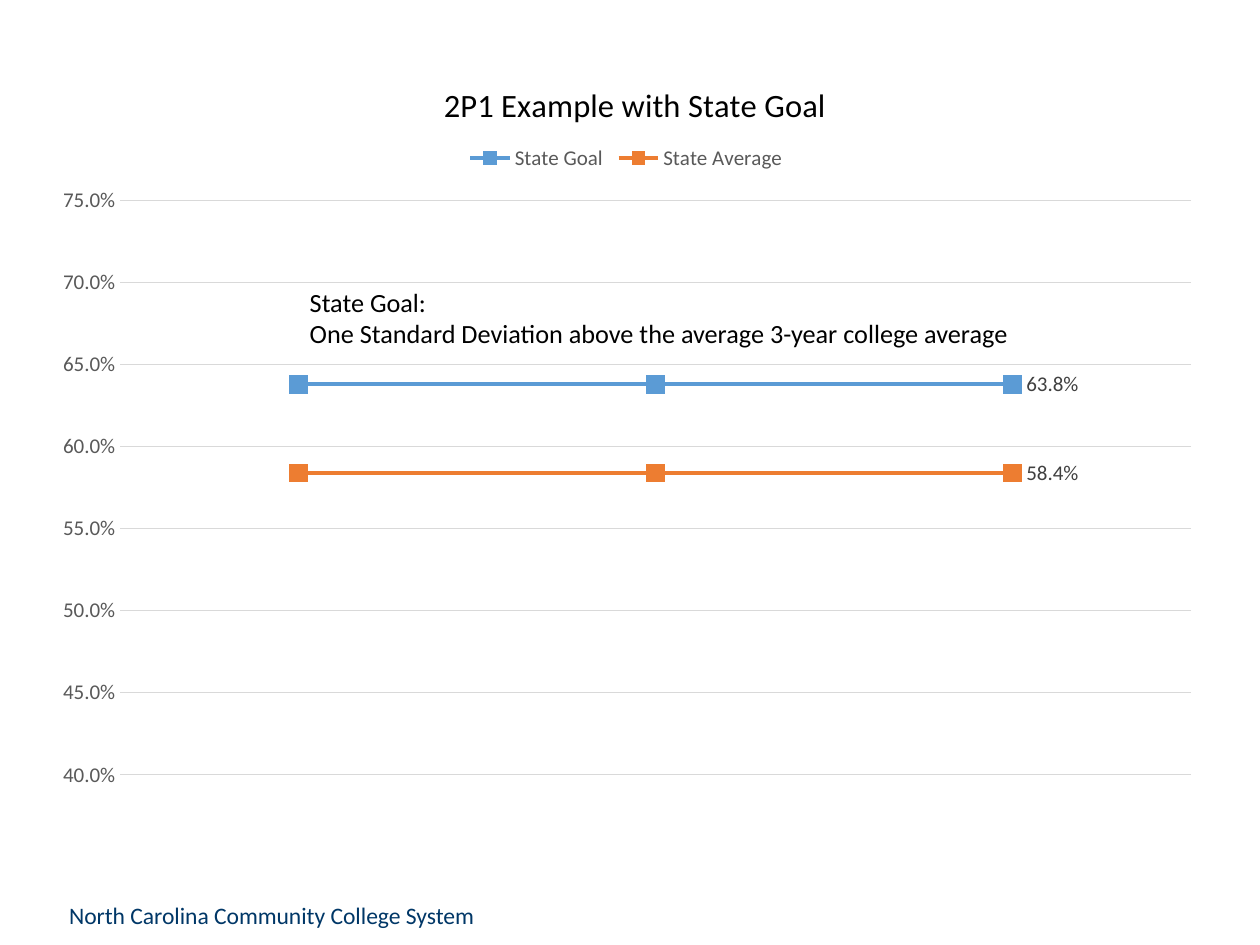
from pptx import Presentation
from pptx.chart.data import CategoryChartData
from pptx.dml.color import RGBColor
from pptx.enum.chart import XL_CHART_TYPE, XL_LABEL_POSITION, XL_LEGEND_POSITION, XL_MARKER_STYLE, XL_TICK_MARK
from pptx.oxml import parse_xml
from pptx.oxml.ns import nsdecls
from pptx.util import Inches, Pt

LINE_MARKERS = XL_CHART_TYPE.LINE_MARKERS
LABEL_RIGHT = XL_LABEL_POSITION.RIGHT
LEGEND_TOP = XL_LEGEND_POSITION.TOP
SQUARE = XL_MARKER_STYLE.SQUARE
NO_TICK = XL_TICK_MARK.NONE

COLORS = {
    "black": "000000",
    "navy": "003767",
    "axis": "595959",
    "label": "404040",
    "grid": "D9D9D9",
    "State Goal": "5B9BD5",
    "State Average": "ED7D31",
}
GOALS = {"State Goal": 0.638, "State Average": 0.584}
YEARS = 3


def style_font(font, size, color):
    font.name = "Calibri"
    font.size = Pt(size)
    font.bold = False
    font.color.rgb = RGBColor.from_string(COLORS[color])


def place_in_chart(element, index, target="", **shares):
    for layout in element.xpath("c:layout"):
        element.remove(layout)
    modes = "".join(f'<c:{axis}Mode val="edge"/>' for axis in "xy")
    values = "".join(f'<c:{name} val="{share}"/>' for name, share in shares.items())
    element.insert(index, parse_xml(
        f'<c:layout {nsdecls("c")}><c:manualLayout>{target}{modes}{values}'
        "</c:manualLayout></c:layout>"))


presentation = Presentation()
presentation.slide_width = Inches(10)
presentation.slide_height = Inches(7.5)
slide = presentation.slides.add_slide(presentation.slide_layouts[6])

chart_data = CategoryChartData(number_format="0.0%")
chart_data.categories = [" "] * YEARS
for name, value in GOALS.items():
    chart_data.add_series(name, [value] * YEARS)
chart = slide.shapes.add_chart(
    LINE_MARKERS, Inches(0.3), Inches(0.36), Inches(9.34), Inches(6.16), chart_data).chart
style_font(chart.font, 10, "black")

chart.has_title = True
title_paragraph = chart.chart_title.text_frame.paragraphs[0]
title_paragraph.text = "2P1 Example with State Goal"
style_font(title_paragraph.font, 18.6, "black")
chart.chart_title.include_in_layout = False
place_in_chart(chart.chart_title._element, 1, x=0.34, y=0.04)

chart.has_legend = True
chart.legend.position = LEGEND_TOP
chart.legend.include_in_layout = False
style_font(chart.legend.font, 12, "axis")
place_in_chart(chart.legend._element, 1, x=0.36, y=0.12, w=0.28, h=0.05)

plot_area = chart._chartSpace.xpath(".//c:plotArea")[0]
place_in_chart(plot_area, 0, '<c:layoutTarget val="inner"/>', x=0.07, y=0.2, w=0.91, h=0.74)
chart.plots[0].vary_by_categories = False

grid_color = RGBColor.from_string(COLORS["grid"])
value_axis = chart.value_axis
value_axis.minimum_scale = 0.4
value_axis.maximum_scale = 0.75
value_axis.major_unit = 0.05
value_axis.tick_labels.number_format = "0.0%"
value_axis.tick_labels.number_format_is_linked = False
value_axis.format.line.fill.background()
chart.category_axis.format.line.color.rgb = grid_color
chart.category_axis.format.line.width = Pt(0.75)
value_axis.major_gridlines.format.line.color.rgb = grid_color
value_axis.major_gridlines.format.line.width = Pt(0.75)
for axis in (chart.category_axis, value_axis):
    axis.major_tick_mark = NO_TICK
    axis.minor_tick_mark = NO_TICK
    style_font(axis.tick_labels.font, 12, "axis")

for series in chart.plots[0].series:
    color = RGBColor.from_string(COLORS[series.name])
    series.smooth = False
    series.format.line.color.rgb = color
    series.format.line.width = Pt(2.25)
    series.marker.style = SQUARE
    series.marker.size = 10
    series.marker.format.fill.solid()
    series.marker.format.fill.fore_color.rgb = color
    series.marker.format.line.fill.background()
    series.data_labels.show_value = False
    last_label = series.points[YEARS - 1].data_label
    style_font(last_label.font, 12, "label")
    last_label.position = LABEL_RIGHT

texts = [
    ("North Carolina Community College System", 0.45, 7.1, 3.55, 0.4, 13.5, "navy"),
    ("State Goal: \vOne Standard Deviation above the average 3-year college average",
     2.36, 2.22, 6.08, 0.61, 15, "black"),
]
for text, left, top, width, height, size, color in texts:
    text_box = slide.shapes.add_textbox(Inches(left), Inches(top), Inches(width), Inches(height))
    text_box.text_frame.word_wrap = True
    paragraph = text_box.text_frame.paragraphs[0]
    paragraph.text = text
    style_font(paragraph.font, size, color)

presentation.save("out.pptx")
